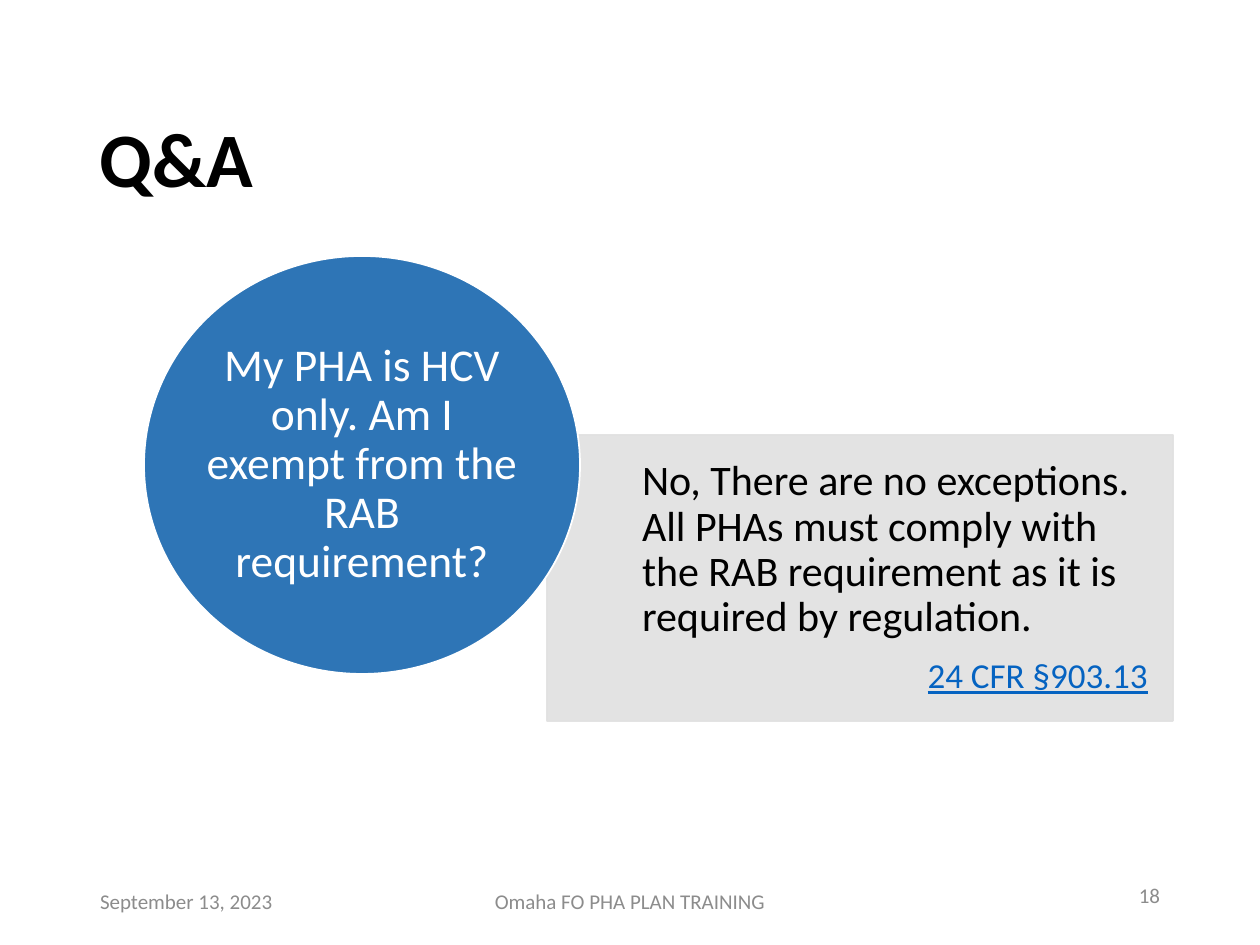
from lxml.etree import SubElement
from pptx import Presentation
from pptx.dml.color import RGBColor
from pptx.enum.shapes import MSO_SHAPE
from pptx.enum.text import MSO_ANCHOR, PP_ALIGN
from pptx.oxml.ns import qn
from pptx.util import Emu, Pt

EMU_PER_PX = 914400 / 126
SLIDE_WIDTH, SLIDE_HEIGHT = 1260, 945
FONT = "Calibri"


def px(length):
    return Emu(round(length * EMU_PER_PX))


def color(hex_string):
    return RGBColor.from_string(hex_string)


def set_frame(shape, margins):
    """Wrap and centre the text vertically; margins are left, top, right, bottom."""
    frame = shape.text_frame
    frame.word_wrap = True
    frame.vertical_anchor = MSO_ANCHOR.MIDDLE
    (frame.margin_left, frame.margin_top,
     frame.margin_right, frame.margin_bottom) = map(px, margins)
    return frame


def write(paragraph, text, size, hex_string, align=PP_ALIGN.LEFT, spacing=0.9):
    paragraph.text = text
    paragraph.alignment = align
    paragraph.line_spacing = spacing
    paragraph.font.name = FONT
    paragraph.font.size = Pt(size)
    paragraph.font.color.rgb = color(hex_string)


def add_label(slide, box, text, size, hex_string, align=PP_ALIGN.LEFT, spacing=1.0):
    shape = slide.shapes.add_textbox(*map(px, box))
    paragraph = set_frame(shape, (13, 6, 13, 6)).paragraphs[0]
    write(paragraph, text, size, hex_string, align, spacing)
    return paragraph


def add_panel(slide, kind, box, fill, line):
    shape = slide.shapes.add_shape(kind, *map(px, box))
    shape.shadow.inherit = False
    shape.fill.solid()
    shape.fill.fore_color.rgb = color(fill)
    shape.line.color.rgb = color(line)
    shape.line.width = Pt(1)
    return shape


def add_title(slide, box):
    add_label(slide, box, "Q&A", 44, "000000", spacing=0.9).font.bold = True


def add_answer(slide, box):
    shape = add_panel(slide, MSO_SHAPE.RECTANGLE, box, "E1E1E1", "E1E1E1")
    for solid_color in shape._element.spPr.iter(qn("a:srgbClr")):
        SubElement(solid_color, qn("a:alpha"), val="90000")
    frame = set_frame(shape, (95, 25, 25, 25))
    answer = frame.paragraphs[0]
    write(answer, "No, There are no exceptions. All PHAs must comply with the RAB "
          "requirement as it is required by regulation.", 24, "000000")
    answer.space_after = Pt(10)
    citation = frame.add_paragraph()
    write(citation, "24 CFR §903.13", 20, "0563C1", PP_ALIGN.RIGHT)
    citation.font.underline = True


def add_question(slide, box):
    shape = add_panel(slide, MSO_SHAPE.OVAL, box, "2E75B6", "FFFFFF")
    # Negative side margins widen the text area inscribed in the oval.
    paragraph = set_frame(shape, (-11, 0, -11, 0)).paragraphs[0]
    write(paragraph, "My PHA is HCV only. Am I exempt from the RAB requirement?",
          26, "FFFFFF", PP_ALIGN.CENTER)


def add_footer(slide, box):
    left, top, width, height = box
    side, middle = 284, 426
    parts = [
        (0, 6, side, "September 13, 2023", PP_ALIGN.LEFT),
        ((width - middle) // 2, 6, middle, "Omaha FO PHA PLAN TRAINING", PP_ALIGN.CENTER),
        (width - side, 0, side, "18", PP_ALIGN.RIGHT),
    ]
    for offset, drop, part_width, text, align in parts:
        part_box = (left + offset, top + drop, part_width, height)
        add_label(slide, part_box, text, 12, "8C8C8C", align)


def main():
    presentation = Presentation()
    presentation.slide_width = px(SLIDE_WIDTH)
    presentation.slide_height = px(SLIDE_HEIGHT)
    slide = presentation.slides.add_slide(presentation.slide_layouts[6])
    add_title(slide, (87, 93, 1086, 139))
    add_footer(slide, (87, 870, 1086, 50))
    add_answer(slide, (547, 435, 626, 286))
    add_question(slide, (144, 256, 436, 418))
    presentation.save("out.pptx")


if __name__ == "__main__":
    main()
